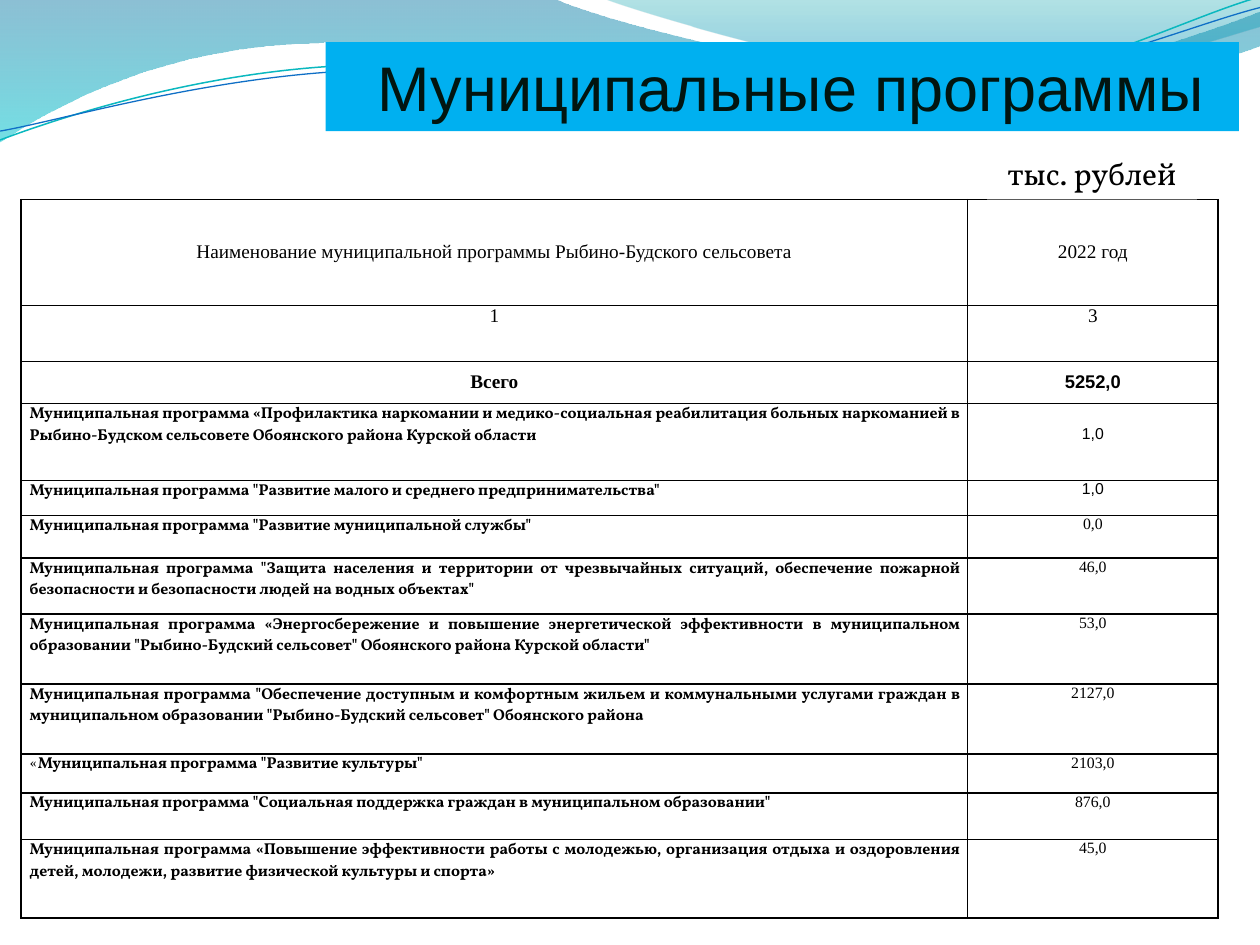
from dataclasses import dataclass, field
from typing import Any, NamedTuple, Optional

from lxml.etree import SubElement
from pptx import Presentation
from pptx.dml.color import RGBColor
from pptx.enum.shapes import MSO_SHAPE
from pptx.enum.text import MSO_ANCHOR, MSO_AUTO_SIZE, PP_ALIGN
from pptx.oxml import parse_xml
from pptx.oxml.ns import nsdecls, qn
from pptx.util import Pt

SANS, SERIF, BOOK = "Arial", "Times New Roman", "Vollkorn"
BLACK, WHITE = "000000", "FFFFFF"
Point = tuple[float, float]


class Stop(NamedTuple):
    position: float
    color: str
    opacity: int


class Run(NamedTuple):
    text: str
    font: str
    size: float
    bold: bool = False


@dataclass
class Wave:
    start: Point
    segments: list[tuple[Point, ...]]
    stops: list[Stop] = field(default_factory=list)
    line: Optional[tuple[str, float]] = None


@dataclass
class Entry:
    runs: list[Run]
    align: PP_ALIGN = PP_ALIGN.CENTER
    anchor: MSO_ANCHOR = MSO_ANCHOR.TOP
    top: float = 0


@dataclass
class Row:
    height: float
    name: Entry
    amount: Entry


def rgb(color: str) -> RGBColor:
    return RGBColor.from_string(color)


def apply_format(target: Any, values: dict[str, Any]) -> None:
    for attribute, value in values.items():
        setattr(target, attribute, value)


def bend(shape: Any, segments: list[tuple[Point, ...]]) -> None:
    lines = iter(list(shape.element.iter(qn("a:lnTo"))))
    for segment in segments:
        first, *others = [next(lines) for _ in segment]
        if others:
            first.tag = qn("a:cubicBezTo")
        for other in others:
            first.append(other[0])
            other.getparent().remove(other)


def draw_wave(slide: Any, wave: Wave) -> None:
    points = [(Pt(x), Pt(y)) for segment in [(wave.start,), *wave.segments] for x, y in segment]
    builder = slide.shapes.build_freeform(*points[0])
    builder.add_line_segments(points[1:], close=bool(wave.stops))
    shape = builder.convert_to_shape()
    bend(shape, wave.segments)
    shape.shadow.inherit = False
    if wave.line:
        color, width = wave.line
        shape.fill.background()
        shape.line.color.rgb = rgb(color)
        shape.line.width = Pt(width)
        return
    shape.line.fill.background()
    shape.fill.gradient()
    shape.fill.gradient_angle = 270
    for gradient_stop, stop in zip(shape.fill.gradient_stops, wave.stops):
        gradient_stop.position = stop.position
        gradient_stop.color.rgb = rgb(stop.color)
    for node, stop in zip(shape.element.iter(qn("a:srgbClr")), wave.stops):
        SubElement(node, qn("a:alpha"), val=str(stop.opacity * 1000))


def write(frame: Any, runs: list[Run], color: str, align: PP_ALIGN) -> None:
    paragraph = frame.paragraphs[0]
    paragraph.alignment = align
    for part in runs:
        run = paragraph.add_run()
        run.text = part.text
        apply_format(run.font, {"name": part.font, "size": Pt(part.size), "bold": part.bold})
        run.font.color.rgb = rgb(color)


def fill_cell(cell: Any, entry: Entry) -> None:
    apply_format(cell, {"margin_left": Pt(5), "margin_right": Pt(5), "margin_top": Pt(entry.top),
                        "margin_bottom": Pt(0), "vertical_anchor": entry.anchor})
    write(cell.text_frame, entry.runs, BLACK, entry.align)
    cell.fill.background()
    properties = cell._tc.get_or_add_tcPr()
    for index, side in enumerate(("lnL", "lnR", "lnT", "lnB")):
        properties.insert(index, parse_xml(
            f'<a:{side} {nsdecls("a")} w="{Pt(1)}"><a:solidFill>'
            f'<a:srgbClr val="{BLACK}"/></a:solidFill></a:{side}>'))


def draw_table(slide: Any, rows: list[Row]) -> None:
    widths = (541, 143)
    table = slide.shapes.add_table(len(rows), len(widths), Pt(12), Pt(114), Pt(sum(widths)),
                                   Pt(sum(row.height for row in rows))).table
    apply_format(table, {"first_row": False, "horz_banding": False})
    for column, width in zip(table.columns, widths):
        column.width = Pt(width)
    for index, row in enumerate(rows):
        table.rows[index].height = Pt(row.height)
        fill_cell(table.cell(index, 0), row.name)
        fill_cell(table.cell(index, 1), row.amount)


def heading(height: float, name: str, amount: str, anchor: MSO_ANCHOR) -> Row:
    return Row(height, *(Entry([Run(text, SERIF, 11)], anchor=anchor) for text in (name, amount)))


def program(height: float, name: str, amount: str, font: str = SERIF, top: float = 0,
            opening: str = "") -> Row:
    runs = [Run(opening, BOOK, 9)] if opening else []
    return Row(height, Entry(runs + [Run(name, BOOK, 9, True)], PP_ALIGN.JUSTIFY),
               Entry([Run(amount, font, 9)], top=top))


WAVES = [
    Wave((0, 0), [((316.8, -0.7),), ((342.7, 12.2), (478, 45.4), (545.8, 45.4)),
                  ((614.2, 45.4), (689.8, 18.7), (720, 6.5)), ((720.7, 26),),
                  ((707.8, 31.7), (626.4, 54.7), (537, 54)),
                  ((447.8, 54), (275, 20.2), (185, 24.5)),
                  ((92.9, 26), (33.1, 59.8), (-0.7, 81.4))],
         stops=[Stop(0, "0074A1", 45), Stop(1, "00C6CF", 55)]),
    Wave((344.9, -0.7), [((366.5, 7.9), (491, 44.6), (553.7, 46.8)),
                         ((616.3, 49.7), (691.9, 23), (720, 15.1)), ((720, 0),)],
         stops=[Stop(0, "00A1A9", 30), Stop(0.8, "008BBF", 45)]),
    Wave((0, 80), [((34.6, 67), (113.8, 41), (199.4, 37.4)),
                   ((284.4, 33.8), (427, 64), (513.4, 57.6)),
                   ((599.8, 51.1), (675.4, 10.8), (718.6, -1.4))], line=("0AB8BF", 0.85)),
    Wave((0, 74.9), [((33.8, 69.1), (118, 43.9), (203.8, 40.3)),
                     ((290.2, 36.7), (429.8, 60.5), (516.2, 54)),
                     ((601.9, 48.2), (677.5, 15.1), (720, 4.3))], line=("0F6FC6", 0.75)),
]

ROWS = [
    heading(60.5, "Наименование муниципальной программы Рыбино-Будского сельсовета", "2022 год",
            MSO_ANCHOR.MIDDLE),
    heading(32, "1", "3", MSO_ANCHOR.TOP),
    Row(24, Entry([Run("Всего", SERIF, 11, True)], anchor=MSO_ANCHOR.MIDDLE),
        Entry([Run("5252,0", SANS, 10.5, True)], anchor=MSO_ANCHOR.MIDDLE)),
    program(44, "Муниципальная программа «Профилактика наркомании и медико-социальная реабилитация "
            "больных наркоманией в Рыбино-Будском сельсовете Обоянского района Курской области",
            "1,0", SANS, top=12.5),
    program(20, 'Муниципальная программа "Развитие малого и среднего предпринимательства"',
            "1,0", SANS),
    program(24.5, 'Муниципальная программа "Развитие муниципальной службы"', "0,0"),
    program(32, 'Муниципальная программа "Защита населения и территории от чрезвычайных ситуаций, '
            'обеспечение пожарной безопасности и безопасности людей на водных объектах"', "46,0"),
    program(40, "Муниципальная программа «Энергосбережение и повышение энергетической эффективности "
            'в муниципальном образовании "Рыбино-Будский сельсовет" Обоянского района Курской '
            'области"', "53,0"),
    program(40, 'Муниципальная программа "Обеспечение доступным и комфортным жильем и коммунальными '
            'услугами граждан в муниципальном образовании "Рыбино-Будский сельсовет" Обоянского '
            "района", "2127,0"),
    program(22.3, 'Муниципальная программа "Развитие культуры"', "2103,0", opening="«"),
    program(26.7, 'Муниципальная программа "Социальная поддержка граждан в муниципальном '
            'образовании"', "876,0"),
    program(44.6, "Муниципальная программа «Повышение эффективности работы с молодежью, организация "
            "отдыха и оздоровления детей, молодежи, развитие физической культуры и спорта»", "45,0"),
]


def main() -> None:
    deck = Presentation()
    apply_format(deck, {"slide_width": Pt(720), "slide_height": Pt(540)})
    slide = deck.slides.add_slide(deck.slide_layouts[5])
    for wave in WAVES:
        draw_wave(slide, wave)

    title = slide.shapes.title
    title.element.getparent().append(title.element)
    apply_format(title, {"left": Pt(186), "top": Pt(24), "width": Pt(522), "height": Pt(51)})
    title.fill.solid()
    title.fill.fore_color.rgb = rgb("00B0F0")
    apply_format(title.text_frame, {"vertical_anchor": MSO_ANCHOR.TOP, "word_wrap": True,
                                    "auto_size": MSO_AUTO_SIZE.NONE})
    write(title.text_frame, [Run(" Муниципальные программы", SANS, 36)], "021510", PP_ALIGN.CENTER)

    draw_table(slide, ROWS)

    unit = slide.shapes.add_shape(MSO_SHAPE.RECTANGLE, Pt(564), Pt(84), Pt(120), Pt(30))
    unit.shadow.inherit = False
    unit.fill.solid()
    unit.fill.fore_color.rgb = rgb(WHITE)
    unit.line.fill.background()
    unit.text_frame.vertical_anchor = MSO_ANCHOR.MIDDLE
    write(unit.text_frame, [Run("тыс. рублей", BOOK, 18)], BLACK, PP_ALIGN.CENTER)
    deck.save("out.pptx")


if __name__ == "__main__":
    main()
